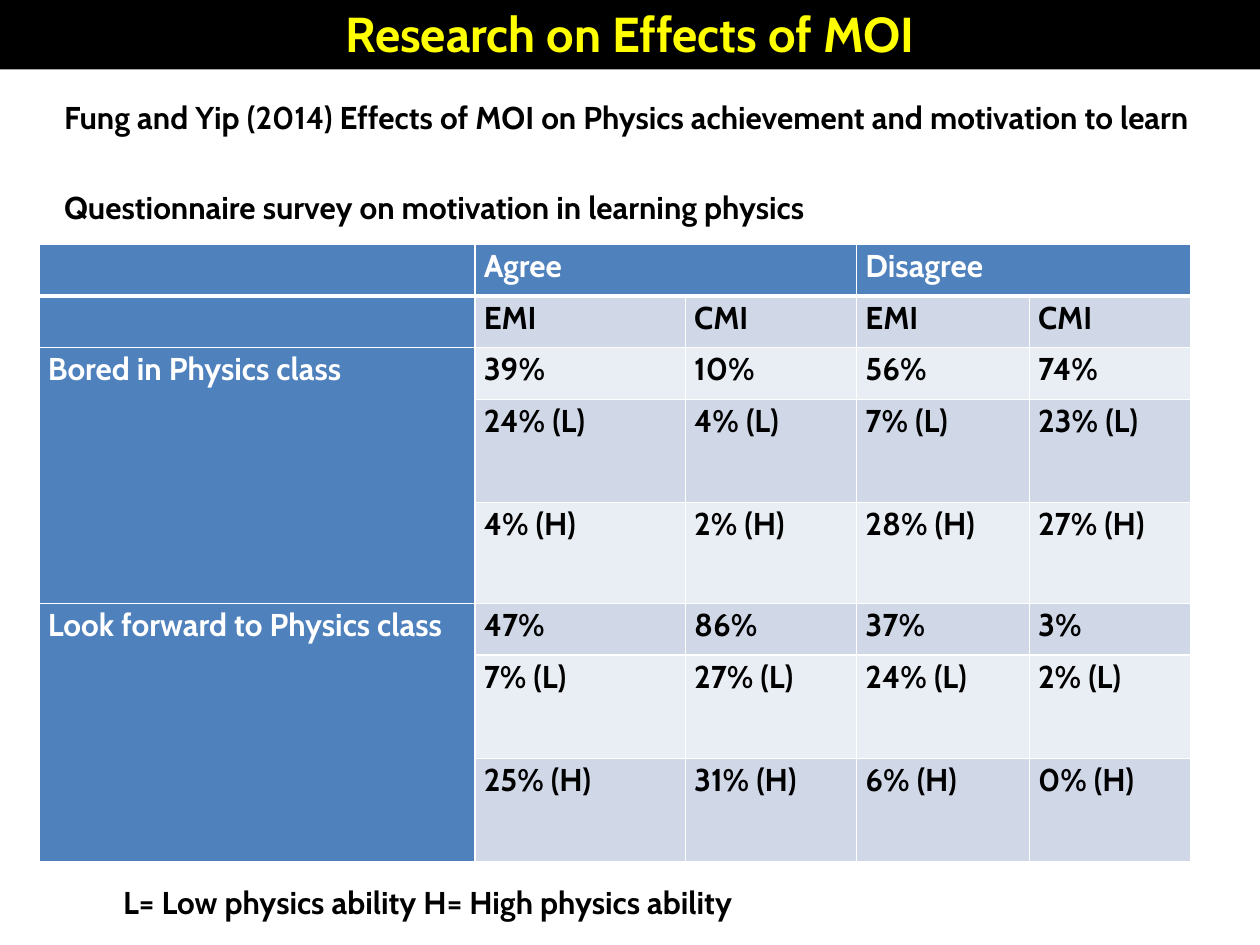
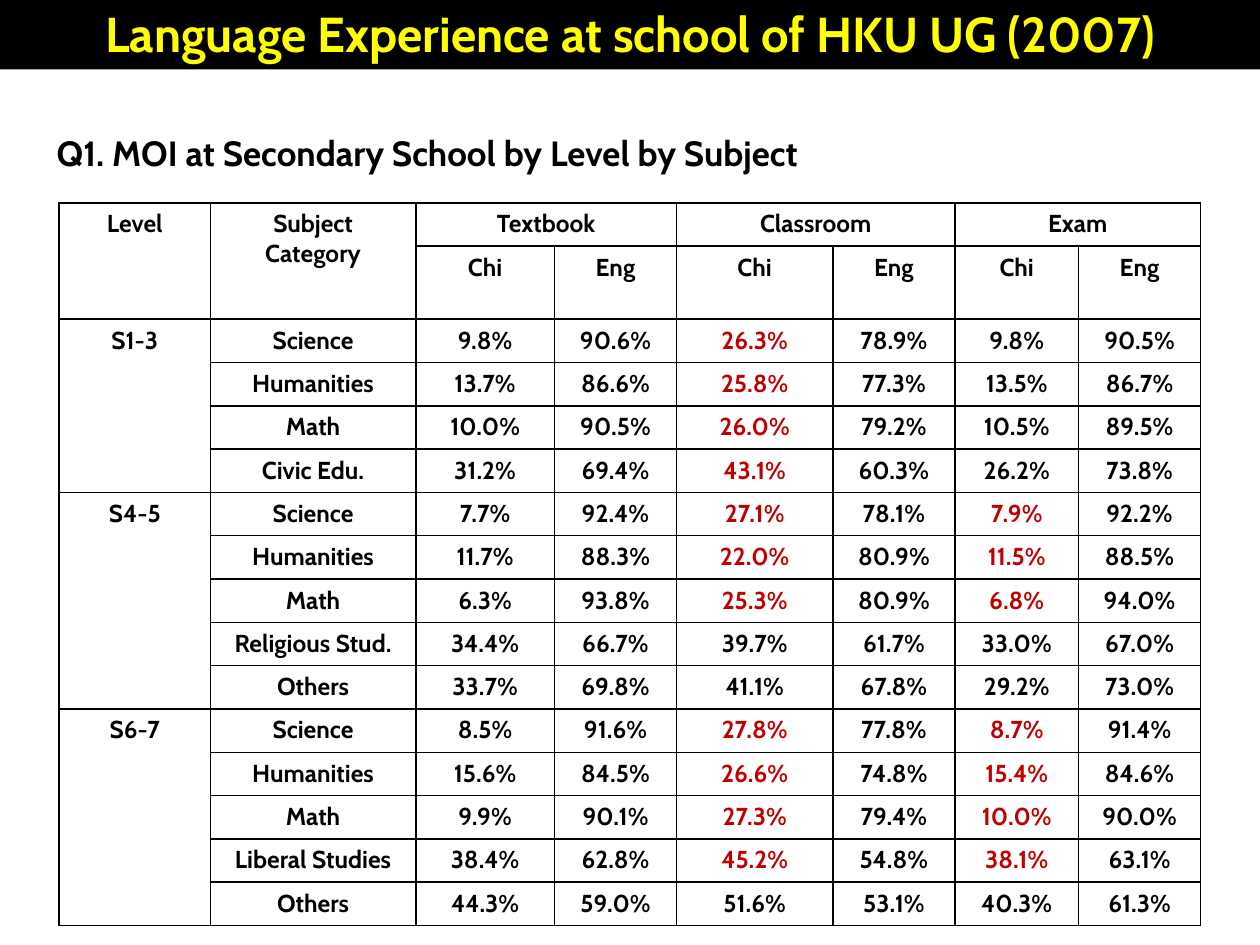
from lxml import etree
from pptx import Presentation
from pptx import util as u
from pptx.dml.color import RGBColor
from pptx.enum import text
from pptx.oxml import ns

COLUMNS, ROWS = 100, 75
CELL = u.Inches(0.1)
FONT = "Cabin"
COLORS = {
    "black": "000000",
    "white": "FFFFFF",
    "title": "FFFF00",
    "header": "4F81BD",
    "band_dark": "D0D8E8",
    "band_light": "E9EDF4",
    "highlight": "C00000",
}

MOTIVATION = {
    "Bored in Physics class": [
        ["39%", "10%", "56%", "74%"],
        ["24% (L)", "4% (L)", "7% (L)", "23% (L)"],
        ["4% (H)", "2% (H)", "28% (H)", "27% (H)"],
    ],
    "Look forward to Physics class": [
        ["47%", "86%", "37%", "3%"],
        ["7% (L)", "27% (L)", "24% (L)", "2% (L)"],
        ["25% (H)", "31% (H)", "6% (H)", "0% (H)"],
    ],
}

LANGUAGE_USE = {
    "S1-3": {
        "Science": [9.8, 90.6, 26.3, 78.9, 9.8, 90.5],
        "Humanities": [13.7, 86.6, 25.8, 77.3, 13.5, 86.7],
        "Math": [10.0, 90.5, 26.0, 79.2, 10.5, 89.5],
        "Civic Edu.": [31.2, 69.4, 43.1, 60.3, 26.2, 73.8],
    },
    "S4-5": {
        "Science": [7.7, 92.4, 27.1, 78.1, 7.9, 92.2],
        "Humanities": [11.7, 88.3, 22.0, 80.9, 11.5, 88.5],
        "Math": [6.3, 93.8, 25.3, 80.9, 6.8, 94.0],
        "Religious Stud.": [34.4, 66.7, 39.7, 61.7, 33.0, 67.0],
        "Others": [33.7, 69.8, 41.1, 67.8, 29.2, 73.0],
    },
    "S6-7": {
        "Science": [8.5, 91.6, 27.8, 77.8, 8.7, 91.4],
        "Humanities": [15.6, 84.5, 26.6, 74.8, 15.4, 84.6],
        "Math": [9.9, 90.1, 27.3, 79.4, 10.0, 90.0],
        "Liberal Studies": [38.4, 62.8, 45.2, 54.8, 38.1, 63.1],
        "Others": [44.3, 59.0, 51.6, 53.1, 40.3, 61.3],
    },
}


def grid(*cells):
    """Turn counts of grid cells into lengths."""
    return [round(count * CELL) for count in cells]


def rgb(name):
    """Look up a colour of the palette."""
    return RGBColor.from_string(COLORS[name])


def place(shape, *box):
    """Move and size a shape on the grid."""
    shape.left, shape.top, shape.width, shape.height = grid(*box)


def write(frame, content, size, color="black", align=text.PP_ALIGN.LEFT, spacing=None):
    """Fill a text frame with bold text in the shared font."""
    frame.text = content
    frame.word_wrap = True
    for paragraph in frame.paragraphs:
        paragraph.alignment = align
        paragraph.line_spacing = spacing
        for run in paragraph.runs:
            run.font.name = FONT
            run.font.size = u.Pt(size)
            run.font.bold = True
            run.font.color.rgb = rgb(color)


def add_slide(presentation, title):
    """Add a slide with its title in a black band."""
    slide = presentation.slides.add_slide(presentation.slide_layouts[1])
    band = slide.shapes.title
    place(band, 0, -0.2, COLUMNS, 5.7)
    band.fill.solid()
    band.fill.fore_color.rgb = rgb("black")
    write(band.text_frame, title, 28, "title", text.PP_ALIGN.CENTER)
    band.text_frame.auto_size = text.MSO_AUTO_SIZE.NONE
    band.text_frame.vertical_anchor = text.MSO_ANCHOR.MIDDLE
    return slide


def set_body(slide, content, size, box, margin, hanging):
    """Write an unbulleted line in the body placeholder."""
    body = slide.placeholders[1]
    place(body, *box)
    write(body.text_frame, content, size)
    paragraph = body.text_frame.paragraphs[0]
    paragraph.space_before = u.Pt(0)
    properties = paragraph._p.get_or_add_pPr()
    properties.set("marL", str(u.Inches(margin)))
    properties.set("indent", str(-u.Inches(hanging)))
    etree.SubElement(properties, ns.qn("a:buNone"))


def add_caption(slide, content, box):
    """Add a text box with one line of text."""
    caption = slide.shapes.add_textbox(*grid(*box))
    write(caption.text_frame, content, 18)


def add_grid_table(slide, left, top, widths, heights):
    """Add an unstyled table with the given columns and rows."""
    frame = slide.shapes.add_table(
        len(heights), len(widths), *grid(left, top, sum(widths), sum(heights))
    )
    table = frame.table
    table.first_row = table.horz_banding = False
    for column, width in zip(table.columns, grid(*widths)):
        column.width = width
    for row, height in zip(table.rows, grid(*heights)):
        row.height = height
    return table


def style_cell(cell, border, fill=None, bottom=1):
    """Draw the borders of a cell and set its fill."""
    properties = cell._tc.get_or_add_tcPr()
    for side in "LRTB":
        width = u.Pt(bottom if side == "B" else 1)
        line = etree.SubElement(properties, ns.qn(f"a:ln{side}"), w=str(width))
        solid = etree.SubElement(line, ns.qn("a:solidFill"))
        etree.SubElement(solid, ns.qn("a:srgbClr"), val=COLORS[border])
    if fill:
        cell.fill.solid()
        cell.fill.fore_color.rgb = rgb(fill)
    else:
        cell.fill.background()


def add_motivation_table(slide):
    """Add the survey answers by question and medium."""
    heights = [4.1, 4.1, 4.1, 8.2, 8, 4.1, 8.2, 8.2]
    table = add_grid_table(slide, 3.1, 19.4, [34.6, 16.7, 13.6, 13.7, 12.8], heights)
    rows = [["", "Agree", "", "Disagree", ""], ["", "EMI", "CMI", "EMI", "CMI"]]
    for question, answers in MOTIVATION.items():
        table.cell(len(rows), 0).merge(table.cell(len(rows) + len(answers) - 1, 0))
        for index, values in enumerate(answers):
            rows.append([question if index == 0 else ""] + values)
    for column in (1, 3):
        table.cell(0, column).merge(table.cell(0, column + 1))
    for row, values in enumerate(rows):
        for column, value in enumerate(values):
            cell = table.cell(row, column)
            heading = row == 0 or column == 0
            band = "band_dark" if row % 2 else "band_light"
            style_cell(cell, "white", "header" if heading else band, 1 if row else 3)
            cell.margin_left = cell.margin_right = u.Inches(0.07)
            cell.margin_top = cell.margin_bottom = 0
            if value:
                color = "white" if heading else "black"
                write(cell.text_frame, value, 18, color, spacing=1.07)


def is_highlighted(level, subject, column):
    """Tell whether a Chinese share is shown in red."""
    if subject in ("Religious Stud.", "Others"):
        return False
    return column == 4 or (column == 6 and level != "S1-3")


def add_language_table(slide):
    """Add the medium of instruction by level and subject."""
    subject_count = sum(len(subjects) for subjects in LANGUAGE_USE.values())
    widths = [12, 16.3, 11, 9.7, 12.4, 9.7, 9.8, 9.7]
    heights = [3.44, 5.8] + [3.44] * subject_count
    table = add_grid_table(slide, 4.7, 16.1, widths, heights)
    for row in range(len(heights)):
        for column in range(len(widths)):
            style_cell(table.cell(row, column), "black")

    def fill_cell(row, column, value, color="black"):
        """Write a centred entry."""
        frame = table.cell(row, column).text_frame
        write(frame, value, 14, color, text.PP_ALIGN.CENTER)

    for column, heading in enumerate(["Level", "Subject\nCategory"]):
        table.cell(0, column).merge(table.cell(1, column))
        fill_cell(0, column, heading)
    for index, heading in enumerate(["Textbook", "Classroom", "Exam"]):
        column = 2 + 2 * index
        table.cell(0, column).merge(table.cell(0, column + 1))
        fill_cell(0, column, heading)
        fill_cell(1, column, "Chi")
        fill_cell(1, column + 1, "Eng")
    row = 2
    for level, subjects in LANGUAGE_USE.items():
        table.cell(row, 0).merge(table.cell(row + len(subjects) - 1, 0))
        fill_cell(row, 0, level)
        for subject, shares in subjects.items():
            fill_cell(row, 1, subject)
            for column, share in enumerate(shares, start=2):
                red = is_highlighted(level, subject, column)
                fill_cell(row, column, f"{share:.1f}%", "highlight" if red else "black")
            row += 1


def main():
    """Build both slides and save them."""
    presentation = Presentation()
    presentation.slide_width, presentation.slide_height = grid(COLUMNS, ROWS)

    slide = add_slide(presentation, "Research on Effects of MOI")
    set_body(slide, "Questionnaire survey on motivation in learning physics",
             18, (3.1, 14.4, 96, 58.8), 0.54, 0.44)
    add_motivation_table(slide)
    add_caption(slide, "L= Low physics ability H= High physics ability",
                (8.8, 69.6, 69.3, 4))
    add_caption(slide, "Fung and Yip (2014) Effects of MOI on Physics achievement "
                "and motivation to learn", (4.1, 7.3, 91.8, 7.1))

    slide = add_slide(presentation, "Language Experience at school of HKU UG (2007)")
    set_body(slide, "Q1. MOI at Secondary School by Level by Subject",
             20, (3.5, 9.9, 91.3, 5.5), 0.38, 0.38)
    add_language_table(slide)

    presentation.save("out.pptx")


if __name__ == "__main__":
    main()
